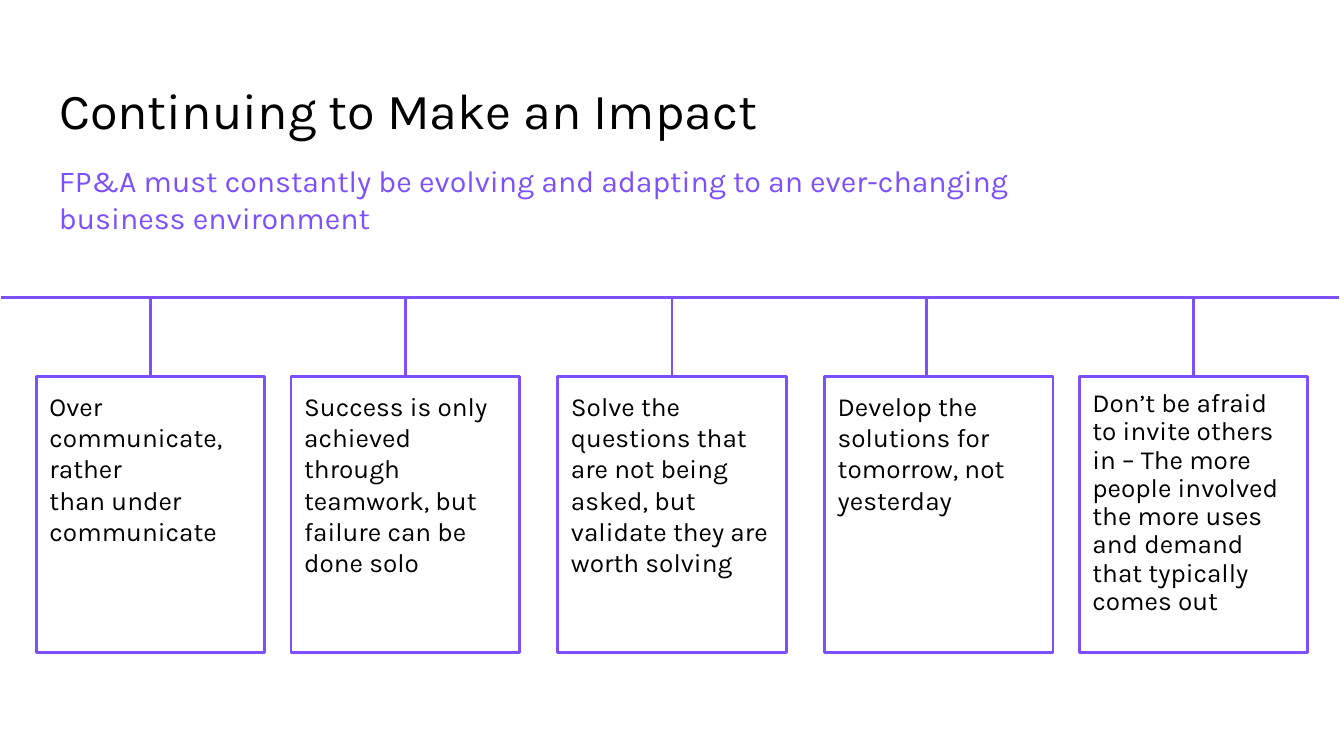
from dataclasses import dataclass

from lxml.etree import SubElement
from pptx import Presentation
from pptx.dml.color import RGBColor
from pptx.enum.shapes import MSO_CONNECTOR, MSO_SHAPE
from pptx.enum.text import MSO_ANCHOR, MSO_AUTO_SIZE, PP_ALIGN
from pptx.oxml.ns import qn
from pptx.util import Inches, Pt


@dataclass(frozen=True)
class Theme:
    font: str = "Karla"
    ink: RGBColor = RGBColor(0x00, 0x00, 0x00)
    accent: RGBColor = RGBColor(0x7C, 0x4F, 0xFF)
    title_size: float = 27
    subtitle_size: float = 16.2
    card_size: float = 14
    line_width: float = 1.5


@dataclass(frozen=True)
class Area:
    """A box in percent of the slide's width and height."""
    left: float
    top: float
    width: float
    height: float


@dataclass(frozen=True)
class Advice:
    text: str
    offset: float  # centre of the card, percent from the slide's centre
    line_spacing: float = 1.0
    stem_shift: float = 0  # stem's distance from the card's centre


THEME = Theme()
WIDTH = Inches(10)
HEIGHT = WIDTH * 9 // 16
INNER, OUTER = 19.85, 38.8
RAIL_Y, CARD_TOP, CARD_WIDTH, CARD_HEIGHT = 39.35, 49.8, 17, 36.5

TITLE_AREA = Area(3.4, 8.7, 93.2, 11.2)
SUBTITLE_AREA = Area(3.4, 19.75, 87.5, 11.2)

ADVICE = [
    Advice("Over communicate, rather \nthan under communicate", -OUTER),
    Advice("Success is only achieved through teamwork, but failure can be done solo", -INNER),
    Advice("Solve the questions that are not being asked, but validate they are worth solving", 0),
    Advice("Develop the solutions for tomorrow, not yesterday", INNER, stem_shift=-0.9),
    Advice("Don’t be afraid to invite others in – The more people involved "
           "the more uses and demand that typically comes out", OUTER, line_spacing=0.9),
]


def across(share: float) -> int:
    return round(WIDTH * share / 100)


def down(share: float) -> int:
    return round(HEIGHT * share / 100)


def bounds(area: Area) -> tuple[int, int, int, int]:
    return across(area.left), down(area.top), across(area.width), down(area.height)


def apply(target, formats: dict) -> None:
    for attribute, value in formats.items():
        setattr(target, attribute, value)


def write(shape, text: str, size: float, color: RGBColor, **paragraph_format) -> None:
    frame = shape.text_frame
    margins = dict.fromkeys(
        ("margin_left", "margin_right", "margin_top", "margin_bottom"), Inches(0.1))
    apply(frame, {"word_wrap": True, "auto_size": MSO_AUTO_SIZE.NONE,
                  "vertical_anchor": MSO_ANCHOR.TOP, **margins})
    paragraph = frame.paragraphs[0]
    paragraph.text = text  # a newline becomes a line break
    apply(paragraph, {"alignment": PP_ALIGN.LEFT, **paragraph_format})
    for run in paragraph.runs:
        apply(run.font, {"name": THEME.font, "size": Pt(size)})
        run.font.color.rgb = color


def outline(shape) -> None:
    shape.line.color.rgb = THEME.accent
    shape.line.width = Pt(THEME.line_width)


def draw_line(slide, x1: float, y1: float, x2: float, y2: float) -> None:
    line = slide.shapes.add_connector(
        MSO_CONNECTOR.STRAIGHT, across(x1), down(y1), across(x2), down(y2))
    outline(line)
    SubElement(line._element.spPr, qn("a:effectLst"))


def draw_advice(slide, advice: Advice) -> None:
    center = 50 + advice.offset
    area = Area(center - CARD_WIDTH / 2, CARD_TOP, CARD_WIDTH, CARD_HEIGHT)
    card = slide.shapes.add_shape(MSO_SHAPE.RECTANGLE, *bounds(area))
    card.shadow.inherit = False
    card.fill.background()
    outline(card)
    write(card, advice.text, THEME.card_size, THEME.ink,
          space_after=Pt(12), line_spacing=advice.line_spacing)
    stem = center + advice.stem_shift
    draw_line(slide, stem, CARD_TOP, stem, RAIL_Y)


def main() -> None:
    deck = Presentation()
    apply(deck, {"slide_width": WIDTH, "slide_height": HEIGHT})
    slide = deck.slides.add_slide(deck.slide_layouts[5])

    # Heading
    title = slide.shapes.title
    apply(title, dict(zip(("left", "top", "width", "height"), bounds(TITLE_AREA))))
    write(title, "Continuing to Make an Impact", THEME.title_size, THEME.ink)
    subtitle = slide.shapes.add_textbox(*bounds(SUBTITLE_AREA))
    write(subtitle, "FP&A must constantly be evolving and adapting to an ever-changing \n"
          "business environment", THEME.subtitle_size, THEME.accent)

    # Rail with the cards hanging from it
    draw_line(slide, 0.1, RAIL_Y, 99.6, RAIL_Y)
    for advice in ADVICE:
        draw_advice(slide, advice)

    deck.save("out.pptx")


if __name__ == "__main__":
    main()
